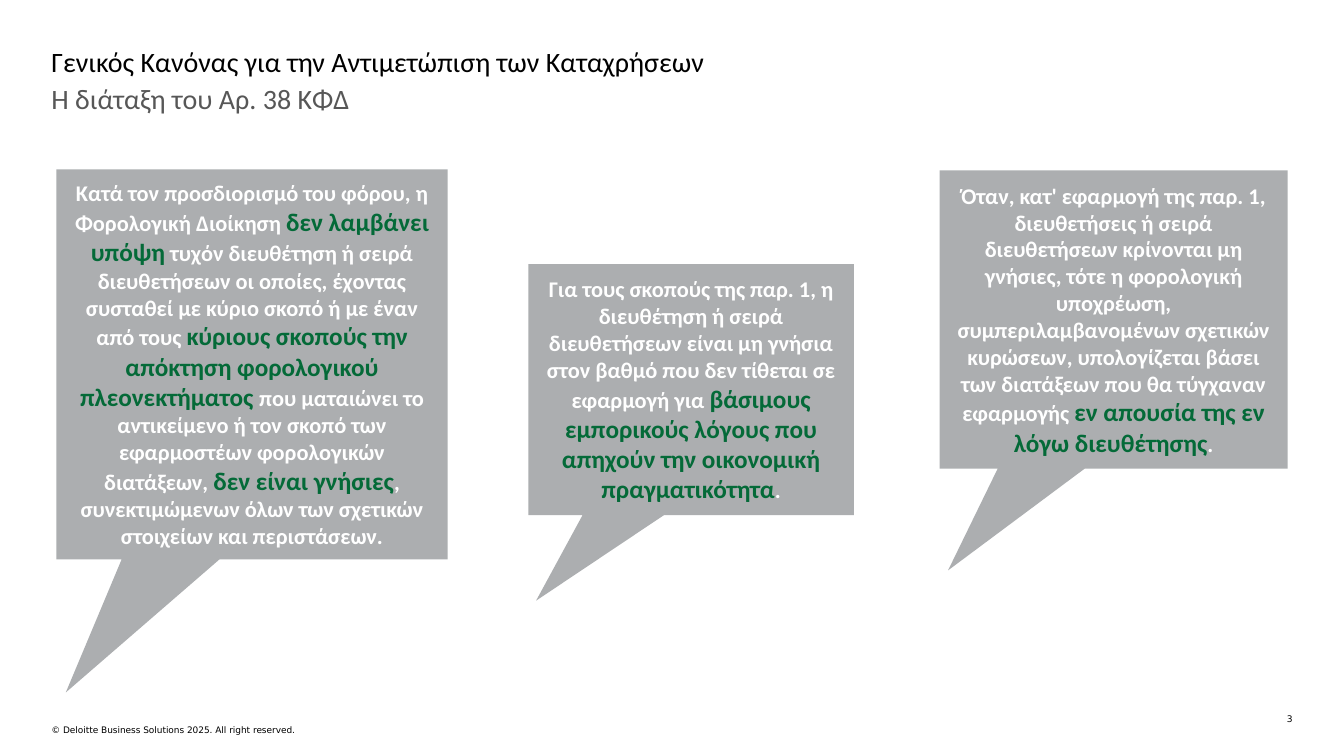
from dataclasses import dataclass

import pptx
import pptx.dml.color
import pptx.enum.shapes
import pptx.enum.text
import pptx.oxml
import pptx.oxml.ns
import pptx.util

EMU_PER_PX = 9144
Align = pptx.enum.text.PP_ALIGN
Anchor = pptx.enum.text.MSO_ANCHOR


@dataclass(frozen=True)
class Theme:
    text_font: str = "Calibri"
    footer_font: str = "DejaVu Sans"
    black: str = "000000"
    subtitle: str = "575757"
    callout: str = "ACAEB0"
    plain: str = "FFFFFF"
    emphasis: str = "046A38"
    heading_size: float = 20
    plain_size: float = 16
    emphasis_size: float = 18
    page_size: float = 6.5
    copyright_size: float = 6.4


@dataclass(frozen=True)
class Box:
    left: int
    top: int
    width: int
    height: int


@dataclass(frozen=True)
class Provision:
    """Callout wording; every second phrase, from the second on, is emphasised."""
    box: Box
    phrases: tuple[str, ...]


THEME = Theme()
POINTER_TIP = (-0.476, 0.841)
CALLOUT_INSET = 10

PROVISIONS = (
    Provision(Box(56, 168, 388, 387), (
        "Κατά τον προσδιορισμό του φόρου, η Φορολογική Διοίκηση ",
        "δεν λαμβάνει υπόψη",
        " τυχόν διευθέτηση ή σειρά διευθετήσεων οι οποίες, έχοντας συσταθεί "
        "με κύριο σκοπό ή με έναν από τους ",
        "κύριους σκοπούς την απόκτηση φορολογικού πλεονεκτήματος ",
        "που ματαιώνει το αντικείμενο ή τον σκοπό των εφαρμοστέων "
        "φορολογικών διατάξεων, ",
        "δεν είναι γνήσιες",
        ", συνεκτιμώμενων όλων των σχετικών στοιχείων και περιστάσεων.",
    )),
    Provision(Box(524, 262, 323, 249), (
        "Για τους σκοπούς της παρ. 1, η διευθέτηση ή σειρά διευθετήσεων "
        "είναι μη γνήσια στον βαθμό που δεν τίθεται σε εφαρμογή για ",
        "βάσιμους εμπορικούς λόγους που απηχούν την οικονομική πραγματικότητα",
        ".",
    )),
    Provision(Box(932, 169, 345, 296), (
        "Όταν, κατ' εφαρμογή της παρ. 1, διευθετήσεις ή σειρά διευθετήσεων "
        "κρίνονται μη γνήσιες, τότε η φορολογική υποχρέωση, "
        "συμπεριλαμβανομένων σχετικών κυρώσεων, υπολογίζεται βάσει των "
        "διατάξεων που θα τύγχαναν εφαρμογής ",
        "εν απουσία της εν λόγω διευθέτησης",
        ".",
    )),
)


def px(length: int) -> pptx.util.Emu:
    return pptx.util.Emu(length * EMU_PER_PX)


def place(box: Box) -> tuple[pptx.util.Emu, ...]:
    return px(box.left), px(box.top), px(box.width), px(box.height)


def style_font(font, name: str, size: float, colour: str, bold: bool = False) -> None:
    font.name = name
    font.size = pptx.util.Pt(size)
    font.bold = bold
    font.color.rgb = pptx.dml.color.RGBColor.from_string(colour)


def prepare_frame(frame, inset: int, anchor) -> None:
    frame.word_wrap = True
    frame.auto_size = pptx.enum.text.MSO_AUTO_SIZE.NONE
    frame.vertical_anchor = anchor
    frame.margin_left = frame.margin_right = px(inset)
    frame.margin_top = frame.margin_bottom = px(inset)


def write_line(shape, text: str, font: str, size: float, colour: str,
               align=Align.LEFT) -> None:
    prepare_frame(shape.text_frame, 0, Anchor.TOP)
    shape.text_frame.text = text
    line = shape.text_frame.paragraphs[0]
    line.alignment = align
    line.space_before = pptx.util.Pt(0)
    style_font(line.runs[0].font, font, size, colour)


def fill_placeholder(placeholder, box: Box, text: str, colour: str) -> None:
    placeholder.left, placeholder.top, placeholder.width, placeholder.height = place(box)
    write_line(placeholder, text, THEME.text_font, THEME.heading_size, colour)


def remove_bullet(paragraph) -> None:
    properties = paragraph._p.get_or_add_pPr()
    properties.set("marL", "0")
    properties.set("indent", "0")
    properties.append(pptx.oxml.parse_xml(
        f"<a:buNone {pptx.oxml.ns.nsdecls('a')}/>"))


def add_callout(slide, provision: Provision) -> None:
    callout = slide.shapes.add_shape(
        pptx.enum.shapes.MSO_SHAPE.RECTANGULAR_CALLOUT, *place(provision.box))
    callout.adjustments[0], callout.adjustments[1] = POINTER_TIP
    callout.shadow.inherit = False
    callout.fill.solid()
    callout.fill.fore_color.rgb = pptx.dml.color.RGBColor.from_string(THEME.callout)
    callout.line.fill.background()
    prepare_frame(callout.text_frame, CALLOUT_INSET, Anchor.MIDDLE)
    paragraph = callout.text_frame.paragraphs[0]
    paragraph.alignment = Align.CENTER
    for position, phrase in enumerate(provision.phrases):
        run = paragraph.add_run()
        run.text = phrase
        if position % 2:
            size, colour = THEME.emphasis_size, THEME.emphasis
        else:
            size, colour = THEME.plain_size, THEME.plain
        style_font(run.font, THEME.text_font, size, colour, bold=True)


def add_footer(slide, box: Box, text: str, size: float, align) -> None:
    write_line(slide.shapes.add_textbox(*place(box)), text,
               THEME.footer_font, size, THEME.black, align)


def main() -> None:
    presentation = pptx.Presentation()
    presentation.slide_width = px(1333)
    presentation.slide_height = px(750)
    slide = presentation.slides.add_slide(presentation.slide_layouts[1])

    fill_placeholder(slide.shapes.title, Box(51, 44, 1231, 34),
                     "Γενικός Κανόνας για την Αντιμετώπιση των Καταχρήσεων",
                     THEME.black)
    subtitle = slide.placeholders[1]
    fill_placeholder(subtitle, Box(51, 81, 1231, 34),
                     "Η διάταξη του Αρ. 38 ΚΦΔ", THEME.subtitle)
    remove_bullet(subtitle.text_frame.paragraphs[0])

    for provision in PROVISIONS:
        add_callout(slide, provision)

    add_footer(slide, Box(1248, 708, 34, 11), "3", THEME.page_size, Align.RIGHT)
    add_footer(slide, Box(51, 719, 586, 22),
               "© Deloitte Business Solutions 2025. All right reserved.",
               THEME.copyright_size, Align.LEFT)
    presentation.save("out.pptx")


if __name__ == "__main__":
    main()
